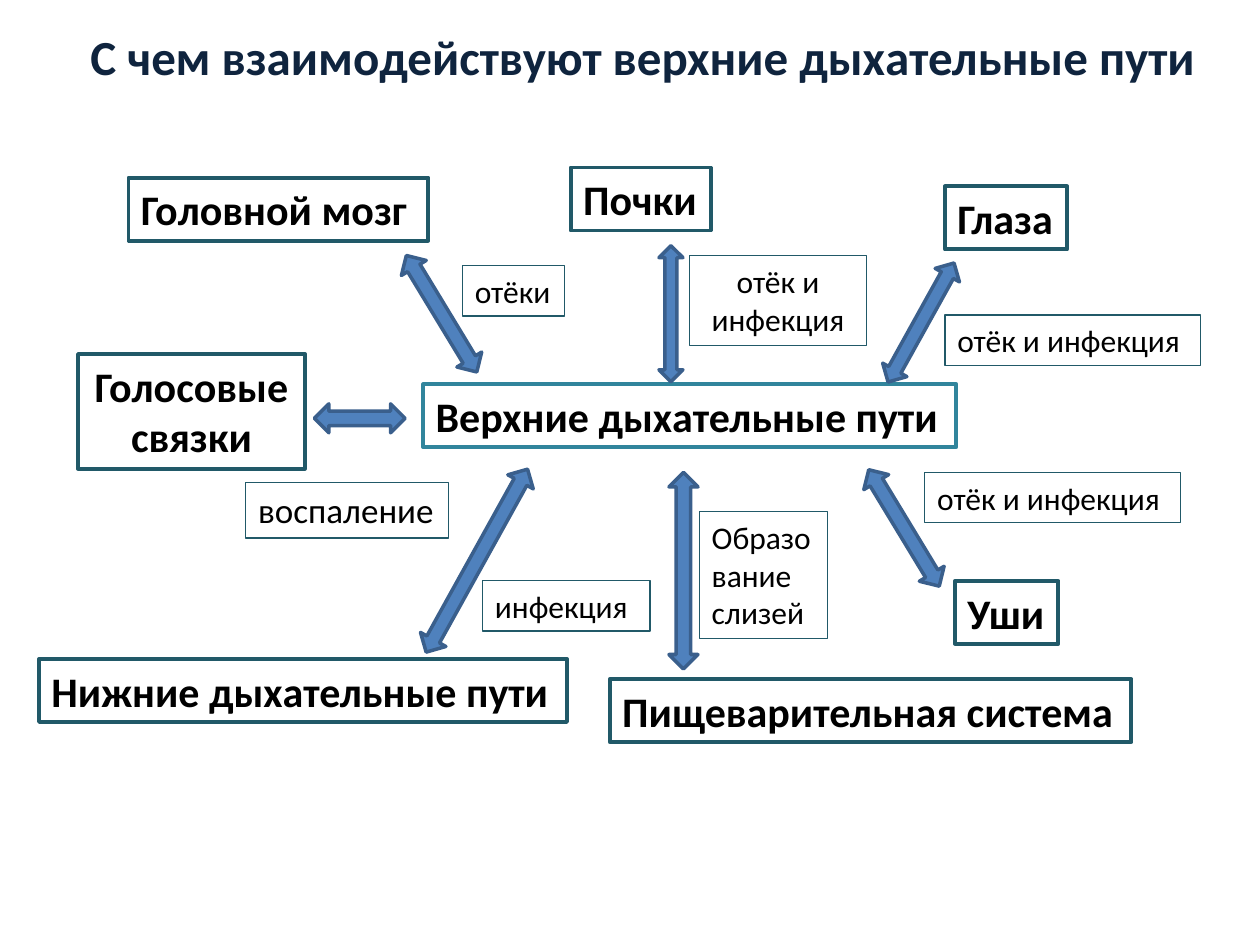
from pptx import Presentation
from pptx.dml.color import RGBColor
from pptx.enum.shapes import MSO_SHAPE
from pptx.enum.text import PP_ALIGN
from pptx.util import Inches, Pt

COLORS = {
    "title": "0F243E", "text": "000000", "hub": "31859C",
    "box": "215968", "arrow": "4F81BD", "edge": "3A5F8C",
}


def color(name):
    return RGBColor.from_string(COLORS[name])


def add_text(spot, text, size, bold=False, tint="text", align=PP_ALIGN.LEFT, fit=True):
    """Add a text box; fit drops the right inset so that one line has room."""
    box = slide.shapes.add_textbox(*map(Inches, spot))
    frame = box.text_frame
    frame.word_wrap = True
    if fit:
        frame.margin_right = 0
    para = frame.paragraphs[0]
    para.text = text
    para.alignment = align
    font = para.font
    font.name = "Calibri"
    font.size = Pt(size)
    font.bold = bold
    font.color.rgb = color(tint)
    return box


prs = Presentation()
prs.slide_width, prs.slide_height = Inches(10), Inches(7.5)
slide = prs.slides.add_slide(prs.slide_layouts[6])

add_text((0.62, 0.16, 9.06, 0.57), "С чем взаимодействуют верхние дыхательные пути",
         28, True, "title")

# Organs: left, top, width, height, text
organs = [
    (3.36, 3.05, 4.23, 0.5, "Верхние дыхательные пути"),
    (1.02, 1.41, 2.38, 0.5, "Головной мозг"),
    (4.53, 1.33, 1.11, 0.5, "Почки"),
    (7.5, 1.48, 0.97, 0.5, "Глаза"),
    (0.62, 2.81, 1.8, 0.91, "Голосовые связки"),
    (7.58, 4.61, 0.82, 0.5, "Уши"),
    (0.31, 5.23, 4.19, 0.5, "Нижние дыхательные пути"),
    (4.84, 5.39, 4.14, 0.5, "Пищеварительная система"),
]
for *spot, text in organs:
    tall = spot[3] > 0.5
    align = PP_ALIGN.CENTER if tall else PP_ALIGN.LEFT
    box = add_text(spot, text, 24, True, align=align, fit=not tall)
    box.line.color.rgb = color("hub" if text.startswith("Верхние") else "box")
    box.line.width = Pt(2.25)

# Arrows: left, top, width, height, turn
arrows = [
    (3.39, 1.95, 0.23, 1.08, -31.2),
    (5.23, 1.95, 0.19, 1.08, 0),
    (7.2, 2.02, 0.22, 1.08, 29),
    (2.74, 2.96, 0.23, 0.72, 270),
    (3.67, 3.62, 0.23, 1.66, 29),
    (5.31, 3.75, 0.23, 1.56, 0),
    (7.06, 3.65, 0.23, 1.08, -31.2),
]
for *spot, turn in arrows:
    arrow = slide.shapes.add_shape(MSO_SHAPE.UP_DOWN_ARROW, *map(Inches, spot))
    arrow.rotation = turn
    arrow.shadow.inherit = False
    arrow.fill.solid()
    arrow.fill.fore_color.rgb = color("arrow")
    arrow.line.color.rgb = color("edge")
    arrow.line.width = Pt(2)

# Effects: left, top, width, height, text, size, alignment
effects = [
    (3.67, 2.11, 0.81, 0.4, "отёки", 18, PP_ALIGN.LEFT),
    (5.47, 2.03, 1.41, 0.71, "отёк и инфекция", 18, PP_ALIGN.CENTER),
    (7.5, 2.5, 2.03, 0.4, "отёк и инфекция", 18, PP_ALIGN.LEFT),
    (1.95, 3.83, 1.61, 0.44, "воспаление", 20, PP_ALIGN.LEFT),
    (3.83, 4.61, 1.33, 0.4, "инфекция", 18, PP_ALIGN.LEFT),
    (5.55, 4.06, 1.02, 1.01, "Образование слизей", 18, PP_ALIGN.LEFT),
    (7.34, 3.75, 2.03, 0.4, "отёк и инфекция", 18, PP_ALIGN.LEFT),
]
for *spot, text, size, align in effects:
    box = add_text(spot, text, size, align=align, fit=spot[3] < 0.5)
    box.line.color.rgb = color("box")
    box.line.width = Pt(0.75)

prs.save("out.pptx")
